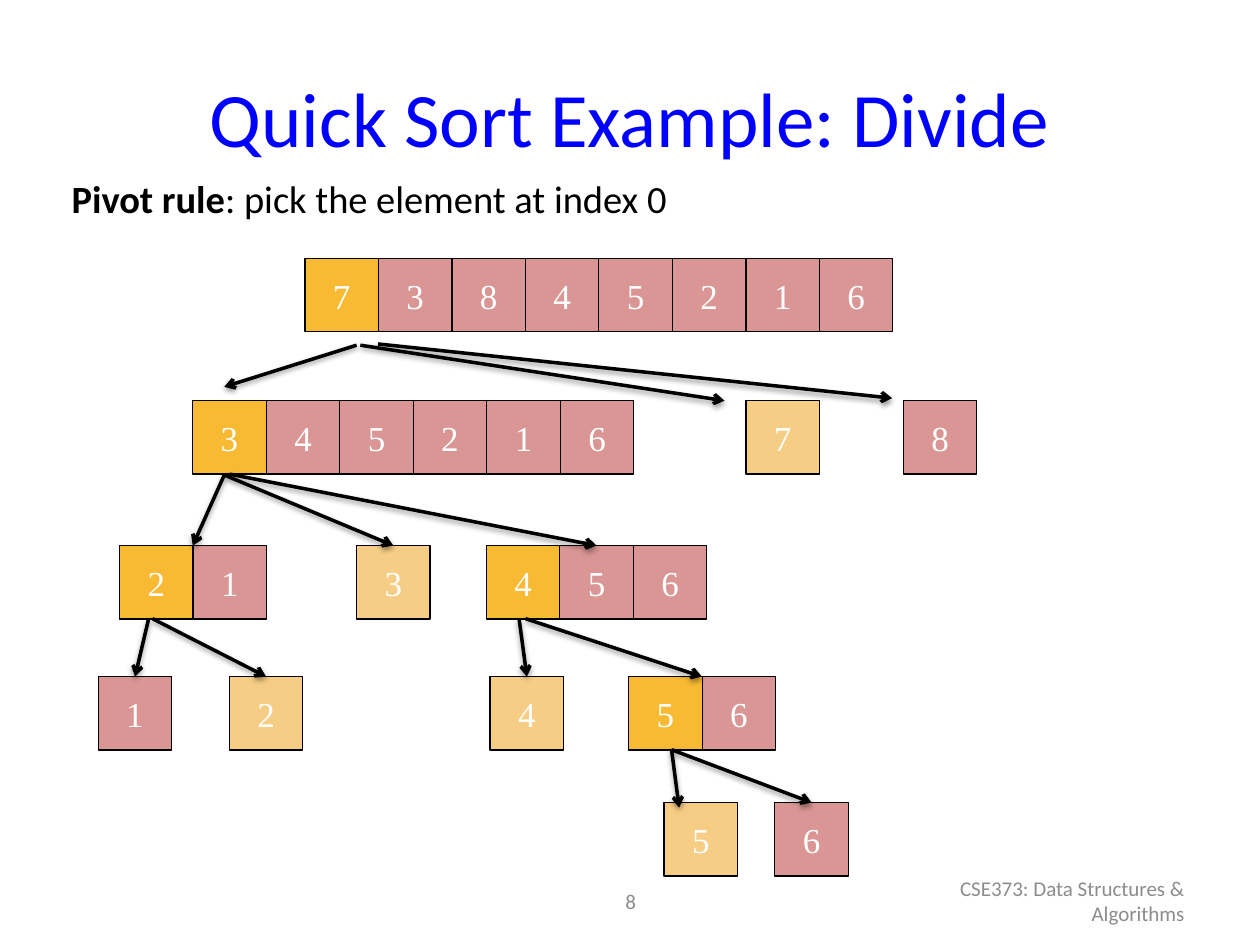
from dataclasses import dataclass

from lxml.etree import SubElement
from pptx import Presentation
from pptx.dml.color import RGBColor
from pptx.enum.shapes import MSO_CONNECTOR, MSO_SHAPE
from pptx.enum.text import MSO_ANCHOR, PP_ALIGN
from pptx.oxml import parse_xml
from pptx.oxml.ns import nsdecls, qn
from pptx.util import Inches, Pt


@dataclass(frozen=True)
class Theme:
    title: str = "0000FF"
    ink: str = "000000"
    footer: str = "8C8C8C"
    cell_text: str = "FFFFFF"
    pivot: str = "F8B933"
    placed_pivot: str = "F6CD84"
    element: str = "D99694"
    sans: str = "Calibri"
    serif: str = "Times New Roman"
    title_size: int = 44
    rule_size: int = 22
    cell_size: int = 20
    footer_size: int = 12


THEME = Theme()
CELL = 7 / 12
ARROW_SHADOW = f"""<a:effectLst {nsdecls("a")}>
  <a:outerShdw blurRad="{Pt(3.1)}" dist="{Pt(1.6)}" dir="5400000" rotWithShape="0">
    <a:srgbClr val="{THEME.ink}"><a:alpha val="38000"/></a:srgbClr>
  </a:outerShdw>
</a:effectLst>"""


def add_run(para, text, font, size, color, bold=False):
    span = para.add_run()
    span.text = text
    span.font.name = font
    span.font.size = Pt(size)
    span.font.bold = bold
    span.font.color.rgb = RGBColor.from_string(color)


def add_text(left, top, width, height, spans, size, color, align, anchor):
    """Add a wrapping text box; spans are (text, bold) pairs."""
    box = slide.shapes.add_textbox(Inches(left), Inches(top), Inches(width), Inches(height))
    box.text_frame.word_wrap = True
    box.text_frame.vertical_anchor = anchor
    para = box.text_frame.paragraphs[0]
    para.alignment = align
    for text, bold in spans:
        add_run(para, text, THEME.sans, size, color, bold)


deck = Presentation()
deck.slide_width = Inches(10)
deck.slide_height = Inches(7.5)
slide = deck.slides.add_slide(deck.slide_layouts[6])

add_text(0.5, 0.3, 9, 1.25, [("Quick Sort Example: Divide", False)],
         THEME.title_size, THEME.title, PP_ALIGN.CENTER, MSO_ANCHOR.MIDDLE)
add_text(0.47, 1.34, 5.28, 0.47,
         [("Pivot rule", True), (": pick the element at index 0", False)],
         THEME.rule_size, THEME.ink, PP_ALIGN.LEFT, MSO_ANCHOR.TOP)
add_text(3.42, 6.95, 3.17, 0.4, [("8", False)],
         THEME.footer_size, THEME.footer, PP_ALIGN.CENTER, MSO_ANCHOR.MIDDLE)
add_text(7.17, 6.95, 2.33, 0.4, [("CSE373: Data Structures & Algorithms", False)],
         THEME.footer_size, THEME.footer, PP_ALIGN.RIGHT, MSO_ANCHOR.MIDDLE)

# Each level of the recursion: top, then its partitions as (left, values, first cell's fill)
levels = [
    (2.05, [(2.42, "73845216", THEME.pivot)]),
    (3.18, [(1.53, "345216", THEME.pivot), (5.92, "7", THEME.placed_pivot),
            (7.17, "8", THEME.element)]),
    (4.33, [(0.95, "21", THEME.pivot), (2.83, "3", THEME.placed_pivot),
            (3.86, "456", THEME.pivot)]),
    (5.37, [(0.78, "1", THEME.element), (1.82, "2", THEME.placed_pivot),
            (3.89, "4", THEME.placed_pivot), (4.99, "56", THEME.pivot)]),
    (6.37, [(5.27, "5", THEME.placed_pivot), (6.15, "6", THEME.element)]),
]
cells = {}
for level, (top, partitions) in enumerate(levels):
    for left, values, first_fill in partitions:
        for index, value in enumerate(values):
            cell = slide.shapes.add_shape(
                MSO_SHAPE.RECTANGLE, Inches(left + index * CELL), Inches(top),
                Inches(CELL), Inches(CELL))
            cell.shadow.inherit = False
            cell.fill.solid()
            cell.fill.fore_color.rgb = RGBColor.from_string(
                THEME.element if index else first_fill)
            cell.line.color.rgb = RGBColor.from_string(THEME.ink)
            cell.line.width = Pt(0.75)
            cell.text_frame.word_wrap = False
            cell.text_frame.vertical_anchor = MSO_ANCHOR.MIDDLE
            para = cell.text_frame.paragraphs[0]
            para.alignment = PP_ALIGN.CENTER
            add_run(para, value, THEME.serif, THEME.cell_size, THEME.cell_text)
            cells[level, value] = cell

# Start, end, then the cell joined at its bottom and the cell joined at its top
arrows = [
    ((2.83, 2.74), (1.78, 3.07), None, None),
    ((3, 2.73), (7.08, 3.16), None, None),
    ((2.86, 2.74), (5.75, 3.18), None, None),
    ((1.78, 3.77), (1.53, 4.33), None, None),
    ((1.78, 3.77), (3.12, 4.33), None, (2, "3")),
    ((1.83, 3.77), (4.74, 4.33), (1, "3"), (2, "5")),
    ((1.18, 4.91), (1.07, 5.37), None, (3, "1")),
    ((1.21, 4.91), (2.11, 5.37), None, (3, "2")),
    ((4.12, 4.91), (4.18, 5.37), None, (3, "4")),
    ((4.17, 4.91), (5.57, 5.37), None, None),
    ((5.33, 5.95), (6.44, 6.37), None, (4, "6")),
    ((5.33, 5.95), (5.39, 6.41), None, None),
]
for start, end, source, target in arrows:
    arrow = slide.shapes.add_connector(
        MSO_CONNECTOR.STRAIGHT, *(Inches(length) for length in start + end))
    if source:
        arrow.begin_connect(cells[source], 2)
    if target:
        arrow.end_connect(cells[target], 0)
    arrow.line.color.rgb = RGBColor.from_string(THEME.ink)
    arrow.line.width = Pt(2)
    SubElement(arrow.line._get_or_add_ln(), qn("a:tailEnd"), type="arrow")
    arrow._element.spPr.append(parse_xml(ARROW_SHADOW))

deck.save("out.pptx")
